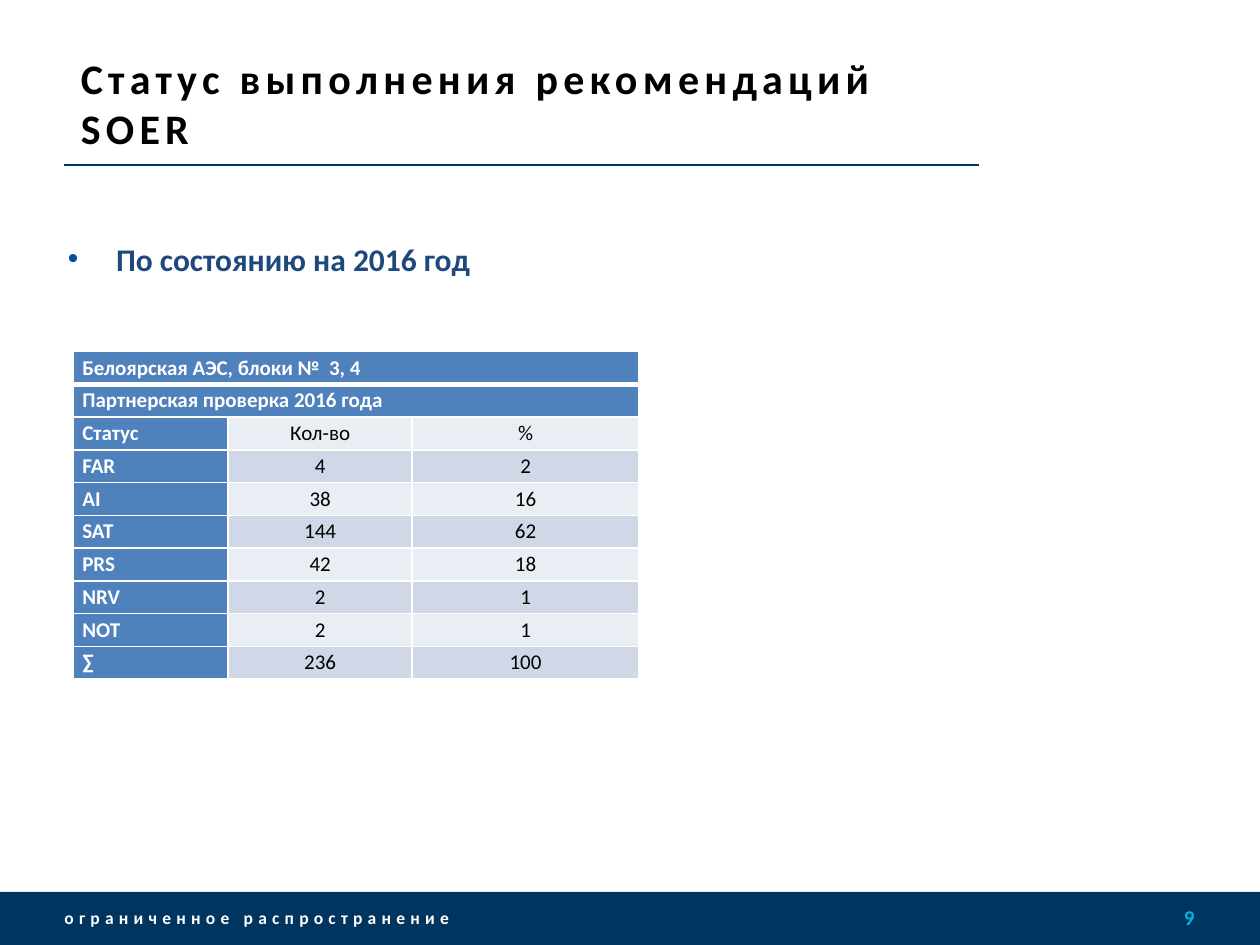
"""Builds the slide on the status of SOER recommendations."""
import lxml.etree
import pptx
import pptx.dml.color
import pptx.enum.shapes
import pptx.enum.text
import pptx.oxml.ns
import pptx.util

Cm, Pt = pptx.util.Cm, pptx.util.Pt
ALIGN = pptx.enum.text.PP_ALIGN
ANCHOR = pptx.enum.text.MSO_ANCHOR

TITLE = "Статус выполнения рекомендаций SOER"
BULLET = "По состоянию на 2016 год"
FOOTER = "ограниченное распространение"
PAGE = "9"
HEADINGS = ["Белоярская АЭС, блоки №  3, 4", "Партнерская проверка 2016 года"]
STATUS = [
    ("Статус", "Кол-во", "%"),
    ("FAR", "4", "2"),
    ("AI", "38", "16"),
    ("SAT", "144", "62"),
    ("PRS", "42", "18"),
    ("NRV", "2", "1"),
    ("NOT", "2", "1"),
    ("∑", "236", "100"),
]
COL_WIDTHS = [3.12, 3.71, 4.57]
ROW_HEIGHT = 0.66
TABLE_LEFT, TABLE_TOP = 1.48, 7.09


class Theme:
    font = "Calibri"
    navy, cyan, white, black = "00355F", "00B3DC", "FFFFFF", "000000"
    body, bullet, header = "1F497D", "0D499C", "4F81BD"
    bands = ["E9EDF4", "D0D8E8"]
    title_size, body_size, table_size, footer_size = 24, 18, 12, 10
    spacing = 3


def rgb(value):
    return pptx.dml.color.RGBColor.from_string(value)


def add_xml(parent, tag, **attrs):
    return lxml.etree.SubElement(parent, pptx.oxml.ns.qn(tag), attrs)


def add_run(p, text, size, color, bold=True, spacing=0):
    r = p.add_run()
    r.text = text
    r.font.name, r.font.size, r.font.bold = Theme.font, Pt(size), bold
    r.font.color.rgb = rgb(color)
    if spacing:
        r.font._element.set("spc", str(spacing * 100))


def add_text(s, box, text, size, color, align=ALIGN.LEFT, anchor=ANCHOR.MIDDLE,
             spacing=Theme.spacing):
    tf = s.shapes.add_textbox(*map(Cm, box)).text_frame
    tf.word_wrap = True
    tf.vertical_anchor = anchor
    tf.margin_left = tf.margin_right = tf.margin_top = tf.margin_bottom = 0
    p = tf.paragraphs[0]
    p.alignment = align
    add_run(p, text, size, color, spacing=spacing)
    return p


def add_bullet(p, indent):
    pPr = p._p.get_or_add_pPr()
    pPr.set("marL", str(Cm(indent)))
    pPr.set("indent", str(-Cm(indent)))
    p.space_after = Pt(3)
    add_xml(add_xml(pPr, "a:buClr"), "a:srgbClr", val=Theme.bullet)
    add_xml(pPr, "a:buSzPct", val="95000")
    add_xml(pPr, "a:buFont", typeface="Arial")
    add_xml(pPr, "a:buChar", char="•")


def add_frame(s):
    bar = s.shapes.add_shape(pptx.enum.shapes.MSO_SHAPE.RECTANGLE,
                             0, Cm(17.98), Cm(25.4), Cm(1.07))
    bar.shadow.inherit = False
    bar.fill.solid()
    bar.fill.fore_color.rgb = rgb(Theme.navy)
    bar.line.fill.background()
    rule = s.shapes.add_connector(pptx.enum.shapes.MSO_CONNECTOR.STRAIGHT,
                                  Cm(1.3), Cm(3.33), Cm(19.74), Cm(3.33))
    rule.line.color.rgb = rgb(Theme.navy)
    rule.line.width = Pt(1)
    add_xml(rule._element.spPr, "a:effectLst")


def style_cell(cell, text, fill, color, bold, align, top=1, bottom=1):
    tcPr = cell._tc.get_or_add_tcPr()
    for side, width in zip("LRTB", (1, 1, top, bottom)):
        ln = add_xml(tcPr, "a:ln" + side, w=str(Pt(width)))
        add_xml(add_xml(ln, "a:solidFill"), "a:srgbClr", val=Theme.white)
    cell.fill.solid()
    cell.fill.fore_color.rgb = rgb(fill)
    cell.margin_left = cell.margin_right = Cm(0.18)
    cell.margin_top = cell.margin_bottom = 0
    cell.vertical_anchor = ANCHOR.MIDDLE
    p = cell.text_frame.paragraphs[0]
    p.alignment = align
    if text:
        add_run(p, text, Theme.table_size, color, bold)


def add_status_table(s):
    rows = [(heading, "", "") for heading in HEADINGS] + STATUS
    table = s.shapes.add_table(
        len(rows), len(COL_WIDTHS), Cm(TABLE_LEFT), Cm(TABLE_TOP),
        Cm(sum(COL_WIDTHS)), Cm(ROW_HEIGHT * len(rows))).table
    for column, width in zip(table.columns, COL_WIDTHS):
        column.width = Cm(width)
    for i, row in enumerate(rows):
        table.rows[i].height = Cm(ROW_HEIGHT)
        for j, text in enumerate(row):
            if i < len(HEADINGS) or j == 0:
                look = (Theme.header, Theme.white, True, ALIGN.LEFT)
            else:
                look = (Theme.bands[i % 2], Theme.black, False, ALIGN.CENTER)
            style_cell(table.cell(i, j), text, *look,
                       top=3 if i == 1 else 1, bottom=3 if i == 0 else 1)
    for i in range(len(HEADINGS)):
        table.cell(i, 0).merge(table.cell(i, len(COL_WIDTHS) - 1))


def main():
    prs = pptx.Presentation()
    prs.slide_width, prs.slide_height = Cm(25.4), Cm(19.05)
    s = prs.slides.add_slide(prs.slide_layouts[6])
    add_frame(s)
    add_text(s, (1.3, 17.96, 20.7, 1.07), FOOTER, Theme.footer_size, Theme.white)
    add_text(s, (22, 17.93, 2.08, 1.12), PAGE, Theme.table_size, Theme.cyan, ALIGN.RIGHT)
    add_text(s, (1.63, 0.89, 18.42, 2.36), TITLE, Theme.title_size, Theme.black)
    p = add_text(s, (1.37, 4.83, 22.94, 1.52), BULLET, Theme.body_size, Theme.body,
                 anchor=ANCHOR.TOP, spacing=0)
    add_bullet(p, 0.97)
    add_status_table(s)
    prs.save("out.pptx")


if __name__ == "__main__":
    main()
